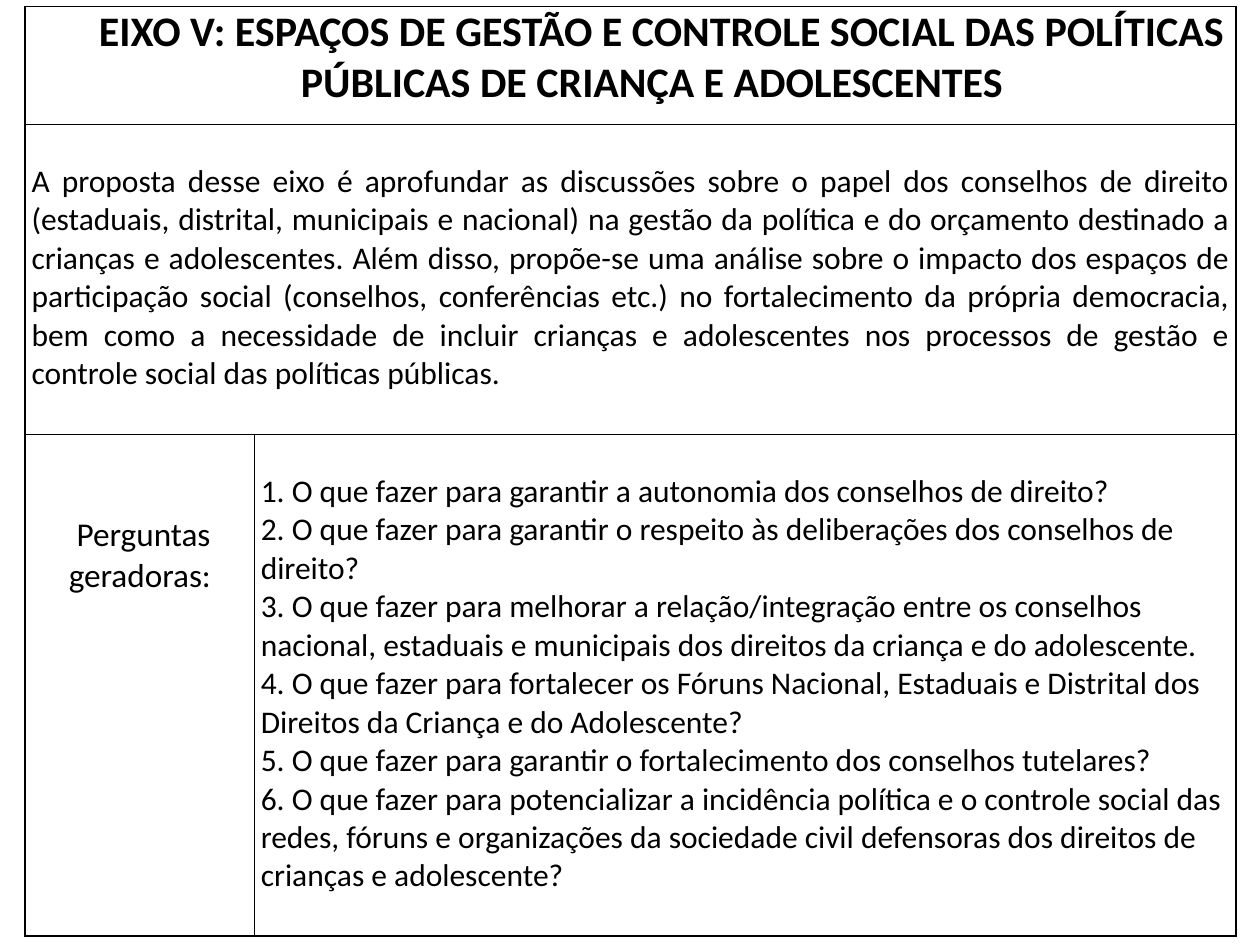
from lxml import etree
from pptx import Presentation
from pptx.dml.color import RGBColor
from pptx.enum import text
from pptx.oxml.ns import qn
from pptx.util import Inches, Pt

BLACK = RGBColor(0, 0, 0)
CENTER, JUSTIFY, LEFT = text.PP_ALIGN.CENTER, text.PP_ALIGN.JUSTIFY, text.PP_ALIGN.LEFT

TITLE = "EIXO V: ESPAÇOS DE GESTÃO E CONTROLE SOCIAL DAS POLÍTICAS PÚBLICAS DE CRIANÇA E ADOLESCENTES  "
PROPOSAL = (
    "A proposta desse eixo é aprofundar as discussões sobre o papel dos conselhos de direito "
    "(estaduais, distrital, municipais e nacional) na gestão da política e do orçamento destinado a "
    "crianças e adolescentes. Além disso, propõe-se uma análise sobre o impacto dos espaços de "
    "participação social (conselhos, conferências etc.) no fortalecimento da própria democracia, "
    "bem como a necessidade de incluir crianças e adolescentes nos processos de gestão e "
    "controle social das políticas públicas."
)
QUESTIONS = [
    "1. O que fazer para garantir a autonomia dos conselhos de direito?",
    "2. O que fazer para garantir o respeito às deliberações dos conselhos de direito?",
    "3. O que fazer para melhorar a relação/integração entre os conselhos nacional, estaduais e "
    "municipais dos direitos da criança e do adolescente.",
    "4. O que fazer para fortalecer os Fóruns Nacional, Estaduais e Distrital dos Direitos da "
    "Criança e do Adolescente?",
    "5. O que fazer para garantir o fortalecimento dos conselhos tutelares?",
    "6. O que fazer para potencializar a incidência política e o controle social das redes, fóruns e "
    "organizações da sociedade civil defensoras dos direitos de crianças e adolescente?",
]


def set_borders(cell):
    tc_pr = cell._tc.get_or_add_tcPr()
    for i, side in enumerate(("lnL", "lnR", "lnT", "lnB")):
        ln = etree.Element(qn(f"a:{side}"), w=str(Pt(1)))
        fill = etree.SubElement(ln, qn("a:solidFill"))
        etree.SubElement(fill, qn("a:srgbClr"), val=str(BLACK))
        tc_pr.insert(i, ln)


prs = Presentation()
prs.slide_width, prs.slide_height = Inches(10), Inches(7.5)
s = prs.slides.add_slide(prs.slide_layouts[6])

tbl = s.shapes.add_table(3, 2, Inches(0.2), Inches(0.05), Inches(9.61), Inches(7.38)).table
tbl.first_row = tbl.horz_banding = False
for col, width in zip(tbl.columns, (1.82, 7.79)):
    col.width = Inches(width)
for row, height in zip(tbl.rows, (0.94, 2.46, 3.98)):
    row.height = Inches(height)
for r in (0, 1):
    tbl.cell(r, 0).merge(tbl.cell(r, 1))
for cell in tbl.iter_cells():
    cell.fill.background()
    set_borders(cell)

# row, column, paragraphs, alignment, size, bold, top margin, left indent
contents = [
    (0, 0, [TITLE], CENTER, 24, True, 0, 0.49),
    (1, 0, [PROPOSAL], JUSTIFY, 18, False, 0.3, 0),
    (2, 0, [" Perguntas geradoras:"], CENTER, 19, False, 0.64, 0),
    (2, 1, QUESTIONS, LEFT, 18, False, 0.3, 0),
]
for r, c, paragraphs, align, size, bold, top, indent in contents:
    cell = tbl.cell(r, c)
    cell.margin_left = cell.margin_right = Inches(0.05)
    cell.margin_top, cell.margin_bottom = Inches(top), 0
    tf = cell.text_frame
    tf.text = "\n".join(paragraphs)
    for p in tf.paragraphs:
        p.alignment = align
        if indent:
            p._p.get_or_add_pPr().set("marL", str(Inches(indent)))
        font = p.runs[0].font
        for name, value in {"name": "Calibri", "size": Pt(size), "bold": bold}.items():
            setattr(font, name, value)
        font.color.rgb = BLACK

prs.save("out.pptx")
